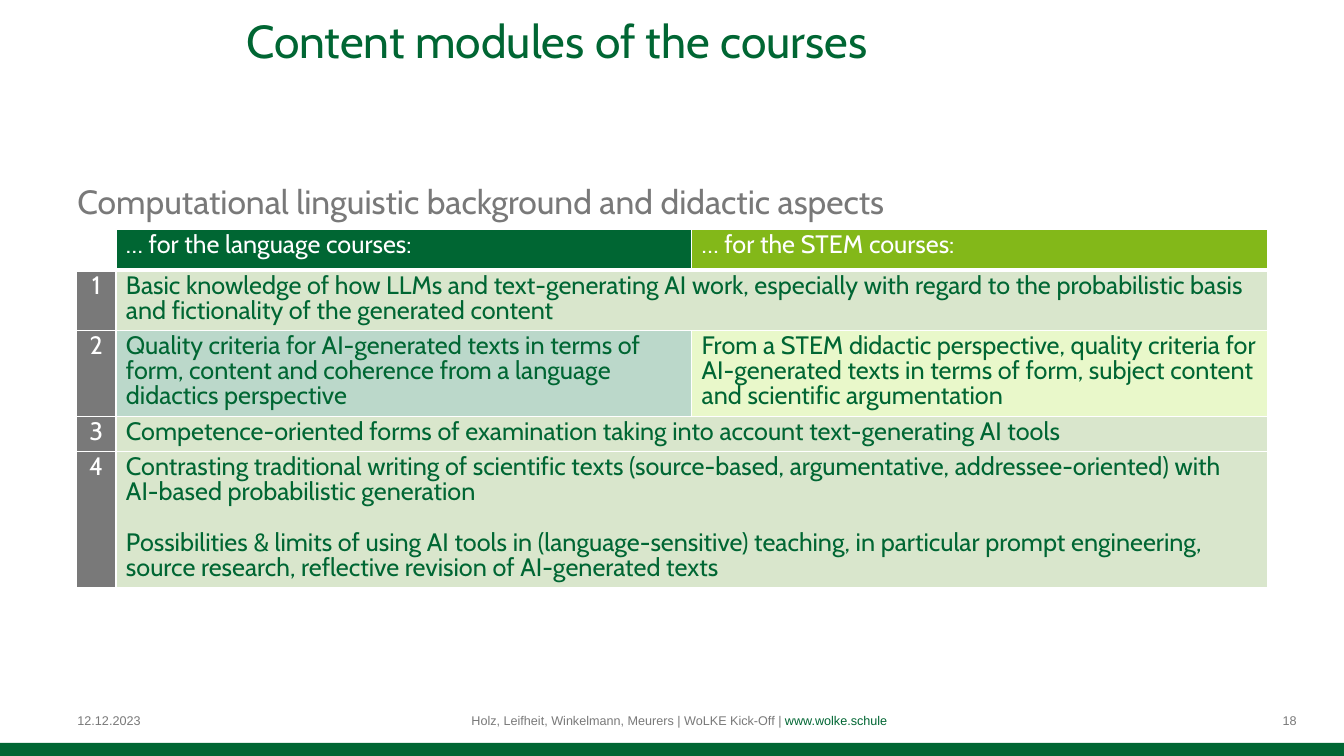
import pptx
import pptx.util
import pptx.dml.color
import pptx.enum.shapes
import pptx.enum.text
from lxml import etree
from pptx.util import Inches

GREEN, GREY, WHITE = "006633", "797979", "FFFFFF"
LIME, PALE, MINT, PALE_LIME = "83B819", "D9E6CC", "BBD8CA", "E9F8CA"
ALIGN = pptx.enum.text.PP_ALIGN
ANCHOR = pptx.enum.text.MSO_ANCHOR
NS = "http://schemas.openxmlformats.org/drawingml/2006/main"


def color(value):
    return pptx.dml.color.RGBColor.from_string(value)


class Deck:
    heading_font, footer_font = "Cabin", "Arial"

    def __init__(self, prs):
        self.s = prs.slides.add_slide(prs.slide_layouts[5])

    def style(self, p, size, fill, font, align=ALIGN.LEFT):
        p.alignment = align
        for r in p.runs:
            r.font.name, r.font.size, r.font.bold = font, pptx.util.Pt(size), False
            r.font.color.rgb = color(fill)

    def place(self, sp, x, y, w, h):
        sp.left, sp.top, sp.width, sp.height = map(Inches, (x, y, w, h))

    def title(self, text, x, y, w, h):
        sp = self.s.shapes.title
        self.place(sp, x, y, w, h)
        tf = sp.text_frame
        tf.text = text
        tf.margin_top = 0
        tf.vertical_anchor = ANCHOR.TOP
        self.style(tf.paragraphs[0], 33, GREEN, self.heading_font, ALIGN.CENTER)

    def text(self, text, x, y, w, h, size, font, align=ALIGN.LEFT,
             anchor=ANCHOR.MIDDLE, right=0.1):
        sp = self.s.shapes.add_textbox(*map(Inches, (x, y, w, h)))
        tf = sp.text_frame
        tf.word_wrap = True
        tf.vertical_anchor = anchor
        tf.margin_right = Inches(right)
        tf.text = text
        self.style(tf.paragraphs[0], size, GREY, font, align)
        return tf.paragraphs[0]

    def bar(self, x, y, w, h):
        sp = self.s.shapes.add_shape(pptx.enum.shapes.MSO_SHAPE.RECTANGLE,
                                     *map(Inches, (x, y, w, h)))
        sp.shadow.inherit = False
        sp.fill.solid()
        sp.fill.fore_color.rgb = color(GREEN)
        sp.line.fill.background()

    def table(self, x, y, widths, heights):
        frame = self.s.shapes.add_table(len(heights), len(widths), *map(
            Inches, (x, y, sum(widths), sum(heights))))
        table = frame.table
        table.first_row = table.horz_banding = False
        for col, w in zip(table.columns, widths):
            col.width = Inches(w)
        for row, h in zip(table.rows, heights):
            row.height = Inches(h)
        return table

    def borders(self, cell, bottom=1, top=1):
        tcPr = cell._tc.get_or_add_tcPr()
        for side, width in (("L", 1), ("R", 1), ("T", top), ("B", bottom)):
            ln = etree.SubElement(tcPr, f"{{{NS}}}ln{side}", w=str(pptx.util.Pt(width)))
            fill = etree.SubElement(ln, f"{{{NS}}}solidFill")
            etree.SubElement(fill, f"{{{NS}}}srgbClr", val=WHITE)

    def cell(self, cell, text, fill, ink, align=ALIGN.LEFT):
        if fill:
            cell.fill.solid()
            cell.fill.fore_color.rgb = color(fill)
        else:
            cell.fill.background()
        cell.text = text
        for i, p in enumerate(cell.text_frame.paragraphs):
            self.style(p, 18, ink, self.heading_font, align)
            p.line_spacing = pptx.util.Pt(18)
            if i:
                p.space_before = pptx.util.Pt(18)


def main():
    prs = pptx.Presentation()
    prs.slide_width, prs.slide_height = Inches(13.33), Inches(7.5)
    deck = Deck(prs)

    # Heading
    deck.title("Content modules of the courses", 0.67, 0.12, 9.71, 1.25)
    deck.text("Computational linguistic background and didactic aspects",
              0.67, 1.75, 12, 0.5, 24, deck.heading_font, anchor=ANCHOR.TOP)

    # Modules: one text spans both courses, two texts split the row
    modules = [
        ["Basic knowledge of how LLMs and text-generating AI work, especially with "
         "regard to the probabilistic basis and fictionality of the generated content"],
        ["Quality criteria for AI-generated texts in terms of form, content and "
         "coherence from a language didactics perspective",
         "From a STEM didactic perspective, quality criteria for AI-generated texts "
         "in terms of form, subject content and scientific argumentation"],
        ["Competence-oriented forms of examination taking into account "
         "text-generating AI tools"],
        ["Contrasting traditional writing of scientific texts (source-based, "
         "argumentative, addressee-oriented) with AI-based probabilistic generation\n"
         "Possibilities & limits of using AI tools in (language-sensitive) teaching, "
         "in particular prompt engineering, source research, reflective revision of "
         "AI-generated texts"],
    ]
    table = deck.table(0.76, 2.28, [0.39, 5.71, 5.71], [0.4, 0.6, 0.85, 0.35, 1.35])
    for i, row in enumerate(table.rows):
        for cell in row.cells:
            deck.borders(cell, bottom=1 if i else 3, top=3 if i == 1 else 1)

    header = [("", None), ("… for the language courses:", GREEN),
              ("… for the STEM courses:", LIME)]
    for col, (text, fill) in enumerate(header):
        deck.cell(table.cell(0, col), text, fill, WHITE)

    for row, texts in enumerate(modules, 1):
        number = table.cell(row, 0)
        number.margin_left = number.margin_right = Inches(0.05)
        deck.cell(number, str(row), GREY, WHITE, ALIGN.CENTER)
        if len(texts) == 1:
            table.cell(row, 1).merge(table.cell(row, 2))
        fills = [PALE] if len(texts) == 1 else [MINT, PALE_LIME]
        for col, (text, fill) in enumerate(zip(texts, fills), 1):
            deck.cell(table.cell(row, col), text, fill, GREEN)

    # Footer
    deck.text("12.12.2023", 0.67, 6.95, 3.11, 0.4, 9, deck.footer_font)
    p = deck.text("Holz, Leifheit, Winkelmann, Meurers |\u00a0WoLKE Kick-Off | ",
                  4.56, 6.95, 4.39, 0.4, 9, deck.footer_font, ALIGN.CENTER)
    r = p.add_run()
    r.text = "www.wolke.schule "
    r.font.name, r.font.size = deck.footer_font, pptx.util.Pt(9)
    r.font.color.rgb = color(GREEN)
    deck.text("18", 9.75, 6.95, 3.11, 0.4, 9, deck.footer_font, ALIGN.RIGHT, right=0)
    deck.bar(0, 7.37, 13.33, 0.13)

    prs.save("out.pptx")


if __name__ == "__main__":
    main()
